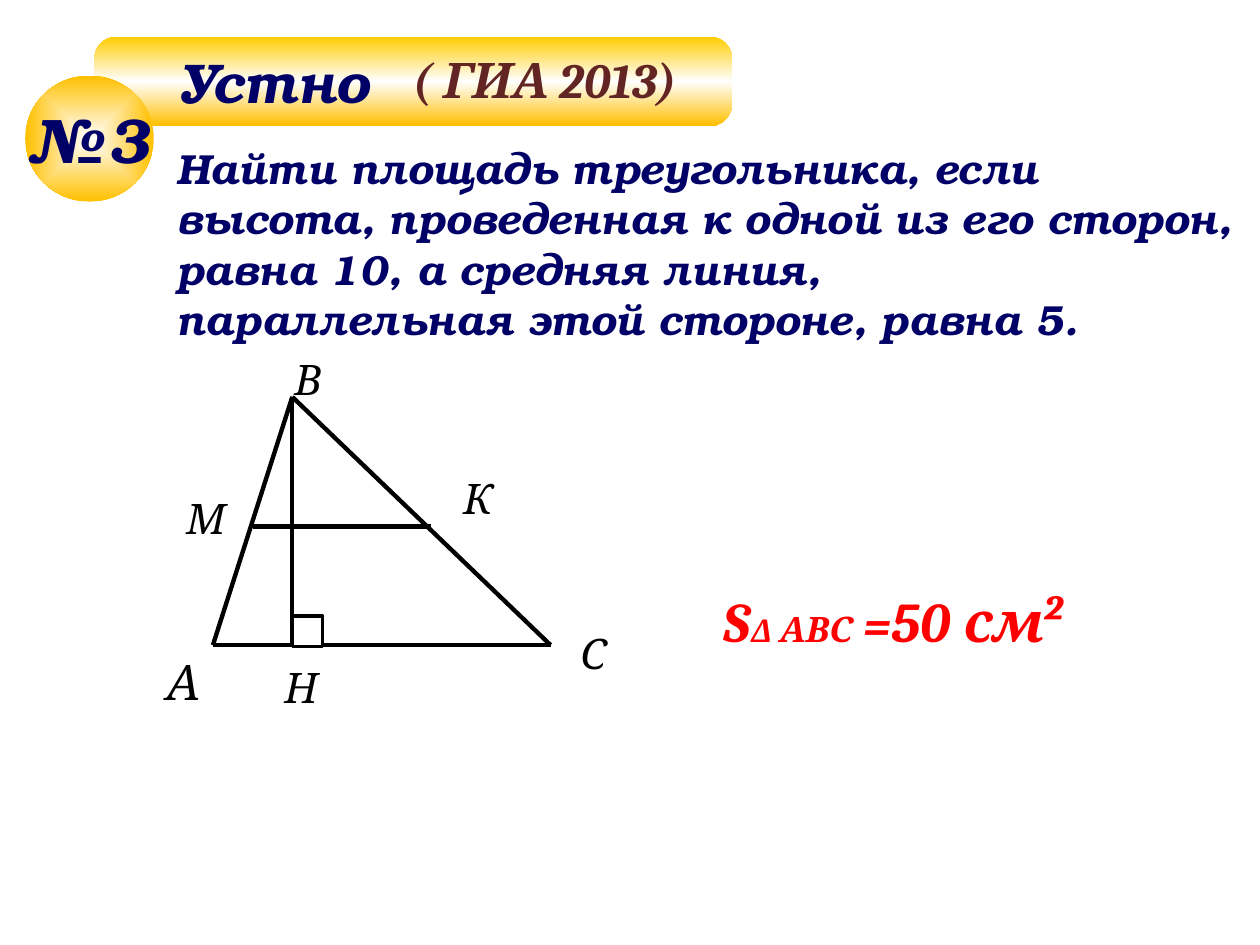
from typing import NamedTuple

from lxml import etree
from pptx import Presentation
from pptx.dml.color import RGBColor
from pptx.enum.shapes import MSO_CONNECTOR, MSO_SHAPE
from pptx.enum.text import MSO_ANCHOR, MSO_AUTO_SIZE, PP_ALIGN
from pptx.oxml import parse_xml
from pptx.oxml.ns import nsdecls, qn
from pptx.util import Inches, Pt

STRAIGHT = MSO_CONNECTOR.STRAIGHT
RECT, ROUND_RECT, OVAL = MSO_SHAPE.RECTANGLE, MSO_SHAPE.ROUNDED_RECTANGLE, MSO_SHAPE.OVAL
LEFT, CENTER = PP_ALIGN.LEFT, PP_ALIGN.CENTER
MIDDLE = MSO_ANCHOR.MIDDLE
GROW = MSO_AUTO_SIZE.SHAPE_TO_FIT_TEXT

NAVY = RGBColor(0x00, 0x00, 0x66)
MAROON = RGBColor(0x63, 0x25, 0x23)
RED = RGBColor(0xFF, 0x00, 0x00)
BLACK = RGBColor(0x00, 0x00, 0x00)
WHITE = RGBColor(0xFF, 0xFF, 0xFF)
YELLOW = RGBColor(0xFF, 0xCC, 0x00)
AMBER = RGBColor(0xFF, 0xC0, 0x00)

SERIF = "Cambria"
DISPLAY = "TeX Gyre Bonum"

VERTICAL = '<a:lin ang="5400000" scaled="1"/>'
FROM_CENTER = ('<a:path path="shape"><a:fillToRect l="50000" t="50000" '
               'r="50000" b="50000"/></a:path>')


class Point(NamedTuple):
    x: float
    y: float


class Box(NamedTuple):
    x: float
    y: float
    w: float
    h: float


class Style(NamedTuple):
    size: float
    color: RGBColor
    font: str = SERIF
    bold: bool = True


class Segment(NamedTuple):
    start: Point
    end: Point
    width: float = 2.5


class Label(NamedTuple):
    text: str
    box: Box
    size: float = 24


A, B, C = Point(1.69, 5.12), Point(2.32, 3.15), Point(4.37, 5.12)
M, K = Point(2.01, 4.18), Point(3.42, 4.18)
H = Point(B.x, A.y)

SIDES = [Segment(A, C), Segment(B, A)]
INNER_LINES = [Segment(B, C), Segment(M, K), Segment(B, H, 2.25)]
LABELS = [
    Label("А", Box(1.22, 5.12, 0.47, 0.57), 28),
    Label("В", Box(2.24, 2.76, 0.47, 0.51)),
    Label("С", Box(4.51, 4.93, 0.39, 0.51)),
    Label("М", Box(1.38, 3.86, 0.39, 0.51)),
    Label("К", Box(3.58, 3.7, 0.39, 0.51)),
]
FOOT_LABEL = Label("Н", Box(2.16, 5.2, 0.39, 0.51))


def inches(values: tuple) -> list:
    return [Inches(v) for v in values]


def add_run(p, text: str, style: Style) -> None:
    r = p.add_run()
    r.text = text
    format_run(r, style)


def format_run(r, style: Style) -> None:
    r.font.size = Pt(style.size)
    r.font.name = style.font
    r.font.bold = style.bold
    r.font.italic = True
    r.font.color.rgb = style.color


def add_text(shapes, box: Box, text: str, style: Style):
    """Add a wrapping text box and return its paragraph."""
    tf = shapes.add_textbox(*inches(box)).text_frame
    tf.word_wrap = True
    tf.auto_size = GROW
    p = tf.paragraphs[0]
    p.text = text
    for r in p.runs:
        format_run(r, style)
    return p


def add_label(shapes, label: Label) -> None:
    add_text(shapes, label.box, label.text, Style(label.size, BLACK, bold=False))


def add_segment(shapes, segment: Segment) -> None:
    line = shapes.add_connector(STRAIGHT, *inches(segment.start + segment.end))
    line.line.color.rgb = BLACK
    line.line.width = Pt(segment.width)
    etree.SubElement(line._element.spPr, qn("a:effectLst"))


def add_gradient_shape(shapes, kind, box: Box, stops: list, direction: str):
    """Add a borderless shape; stops are (percent, colour) pairs."""
    sp = shapes.add_shape(kind, *inches(box))
    sp.shadow.inherit = False
    sp.line.fill.background()
    gs = "".join(f'<a:gs pos="{pos * 1000}"><a:srgbClr val="{color}"/></a:gs>'
                 for pos, color in stops)
    fill = parse_xml(f'<a:gradFill {nsdecls("a")} rotWithShape="1">'
                     f'<a:gsLst>{gs}</a:gsLst>{direction}</a:gradFill>')
    sp._element.spPr.find(qn("a:prstGeom")).addnext(fill)
    return sp


def set_shape_text(sp, text: str, style: Style, align, wrap: bool) -> None:
    tf = sp.text_frame
    tf.word_wrap = wrap
    tf.vertical_anchor = MIDDLE
    p = tf.paragraphs[0]
    p.alignment = align
    add_run(p, text, style)


def add_header(shapes) -> None:
    banner = add_gradient_shape(shapes, ROUND_RECT, Box(0.75, 0.29, 5.06, 0.71),
                                [(0, YELLOW), (50, WHITE), (100, AMBER)], VERTICAL)
    banner.adjustments[0] = 0.25
    banner.text_frame.margin_left = Inches(0.6)
    set_shape_text(banner, "Устно", Style(32, NAVY, DISPLAY), LEFT, True)
    add_text(shapes, Box(3.18, 0.34, 2.63, 0.57), "( ГИА 2013)", Style(28, MAROON))


def add_triangle(shapes) -> None:
    for side in SIDES:
        add_segment(shapes, side)
    group = shapes.add_group_shape().shapes
    for line in INNER_LINES:
        add_segment(group, line)
    for label in LABELS:
        add_label(group, label)
    add_label(shapes, FOOT_LABEL)

    mark = 0.24
    right_angle = shapes.add_shape(RECT, *inches((H.x, H.y - mark + 0.01, mark, mark)))
    right_angle.shadow.inherit = False
    right_angle.fill.solid()
    right_angle.fill.fore_color.rgb = WHITE
    right_angle.line.color.rgb = BLACK
    right_angle.line.width = Pt(2)


def add_answer(shapes) -> None:
    p = add_text(shapes, Box(5.64, 4.61, 3.39, 0.64), "S", Style(32, RED))
    for text, size in [("Δ ", 18), ("АВС", 20), (" =", 28), ("50 см²", 32)]:
        add_run(p, text, Style(size, RED))


def add_problem(shapes) -> None:
    badge = add_gradient_shape(shapes, OVAL, Box(0.2, 0.6, 1.02, 1),
                               [(0, WHITE), (100, AMBER)], FROM_CENTER)
    set_shape_text(badge, "№3", Style(36, NAVY, DISPLAY), CENTER, False)
    add_text(shapes, Box(1.3, 1.08, 8.62, 1.72),
             "Найти площадь треугольника, если высота, проведенная к одной из его "
             "сторон, равна 10, а средняя линия,\vпараллельная этой стороне, равна 5.",
             Style(24, NAVY, DISPLAY))


def main() -> None:
    prs = Presentation()
    prs.slide_width, prs.slide_height = Inches(10), Inches(7.5)
    shapes = prs.slides.add_slide(prs.slide_layouts[6]).shapes
    add_header(shapes)
    add_triangle(shapes)
    add_answer(shapes)
    add_problem(shapes)
    prs.save("out.pptx")


if __name__ == "__main__":
    main()
